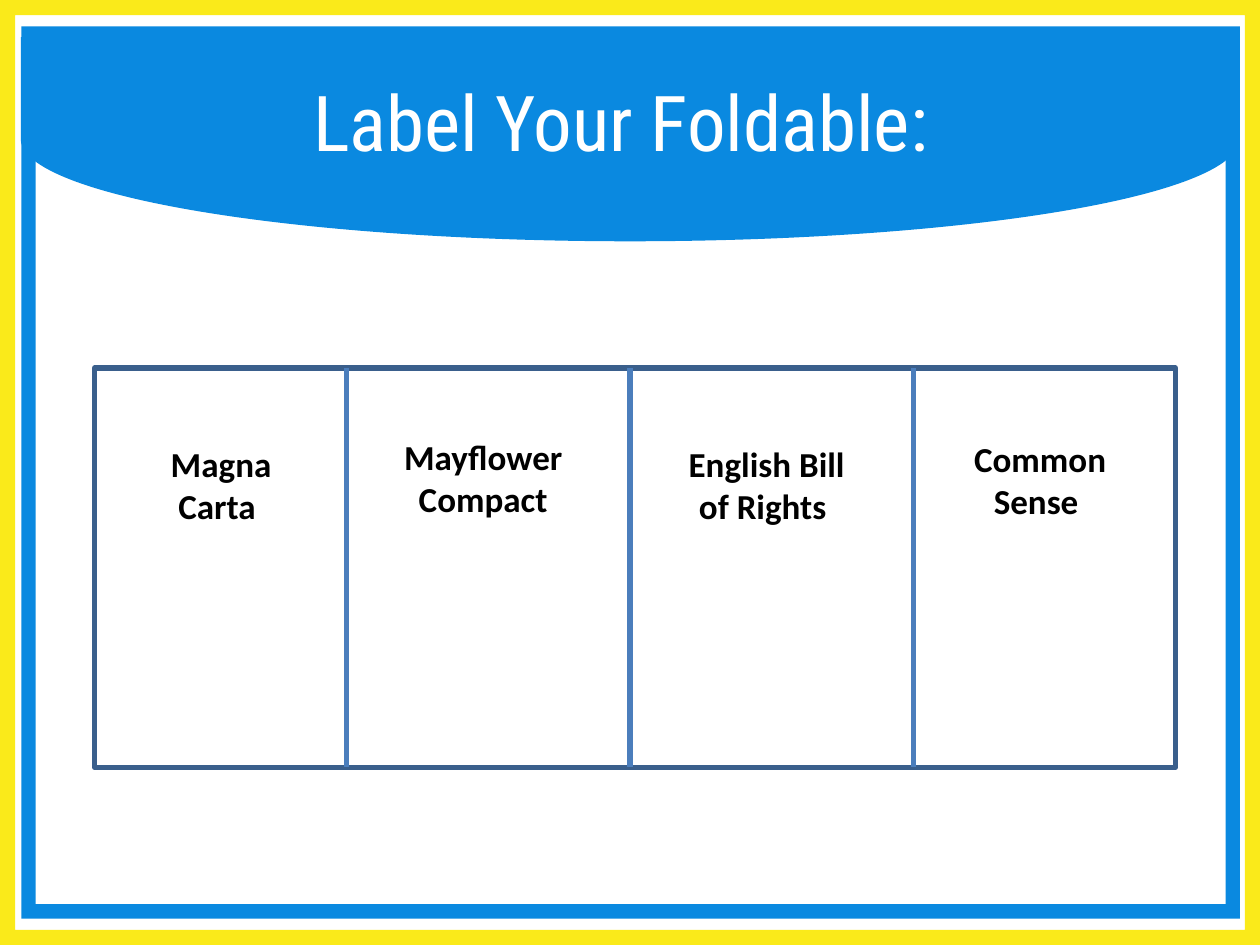
from pptx import Presentation, util as u
from pptx.dml.color import RGBColor
from pptx.enum import shapes, text
from pptx.oxml.ns import qn
from lxml import etree

TITLE = "Label Your Foldable: "
FLAPS = [
    ("Magna Carta ", 0.92, 3.46),
    ("Mayflower Compact", 3, 3.41),
    ("English Bill of Rights ", 5.25, 3.46),
    ("Common Sense ", 7.42, 3.42),
]
BLUE, YELLOW, OUTLINE, DIVIDER = "0A89E0", "FAEA1A", "3A5F8C", "4B7EBC"
FOLD_TOP, FOLD_HEIGHT = 2.92, 3.17
FIRST_FOLD, FOLD_STEP = 2.75, 2.25


def color(value):
    return RGBColor.from_string(value)


def add_shape(slide, kind, place, fill=None, line=None):
    shape = slide.shapes.add_shape(kind, *map(u.Inches, place))
    shape.shadow.inherit = False
    if fill:
        shape.fill.solid()
        shape.fill.fore_color.rgb = color(fill)
    else:
        shape.fill.background()
    if line:
        shape.line.color.rgb = color(line)
        shape.line.width = u.Pt(3)
    else:
        shape.line.fill.background()
    return shape


def add_divider(slide, x):
    ends = map(u.Inches, (x, FOLD_TOP, x, FOLD_TOP + FOLD_HEIGHT))
    divider = slide.shapes.add_connector(shapes.MSO_CONNECTOR.STRAIGHT, *ends)
    divider.line.color.rgb = color(DIVIDER)
    divider.line.width = u.Pt(3)
    etree.SubElement(divider._element.spPr, qn("a:effectLst"))


def write(box, words, font, size, ink, bold=False):
    box.text_frame.word_wrap = True
    para = box.text_frame.paragraphs[0]
    para.alignment = text.PP_ALIGN.CENTER
    span = para.add_run()
    span.text = words
    span.font.name, span.font.size, span.font.bold = font, u.Pt(size), bold
    span.font.color.rgb = color(ink)


def main():
    """Build the foldable labelling slide."""
    deck = Presentation()
    deck.slide_width, deck.slide_height = u.Inches(10), u.Inches(7.5)
    slide = deck.slides.add_slide(deck.slide_layouts[5])

    kinds = shapes.MSO_SHAPE
    banner = add_shape(slide, kinds.FLOWCHART_DELAY, (4.19, -3.73, 1.62, 9.67), BLUE)
    banner.rotation = 90
    for place, fill in (((0, 0, 10, 7.5), YELLOW), ((0.17, 0.21, 9.67, 7.08), BLUE)):
        add_shape(slide, kinds.FRAME, place, fill).adjustments[0] = 0.016

    title = slide.shapes.title
    title.left, title.top, title.width, title.height = map(u.Inches, (0.5, 0.33, 9, 1.25))
    title.text_frame.vertical_anchor = text.MSO_ANCHOR.MIDDLE
    write(title, TITLE, "Roboto Condensed", 44, "FFFFFF")
    slide.shapes._spTree.append(title._element)

    add_shape(slide, kinds.RECTANGLE, (0.75, FOLD_TOP, 8.58, FOLD_HEIGHT), line=OUTLINE)
    for index in range(len(FLAPS) - 1):
        add_divider(slide, FIRST_FOLD + index * FOLD_STEP)
    for words, left, top in FLAPS:
        box = slide.shapes.add_textbox(*map(u.Inches, (left, top, 1.67, 0.77)))
        box.text_frame.auto_size = text.MSO_AUTO_SIZE.SHAPE_TO_FIT_TEXT
        write(box, words, "Calibri", 20, "000000", True)

    deck.save("out.pptx")


if __name__ == "__main__":
    main()
